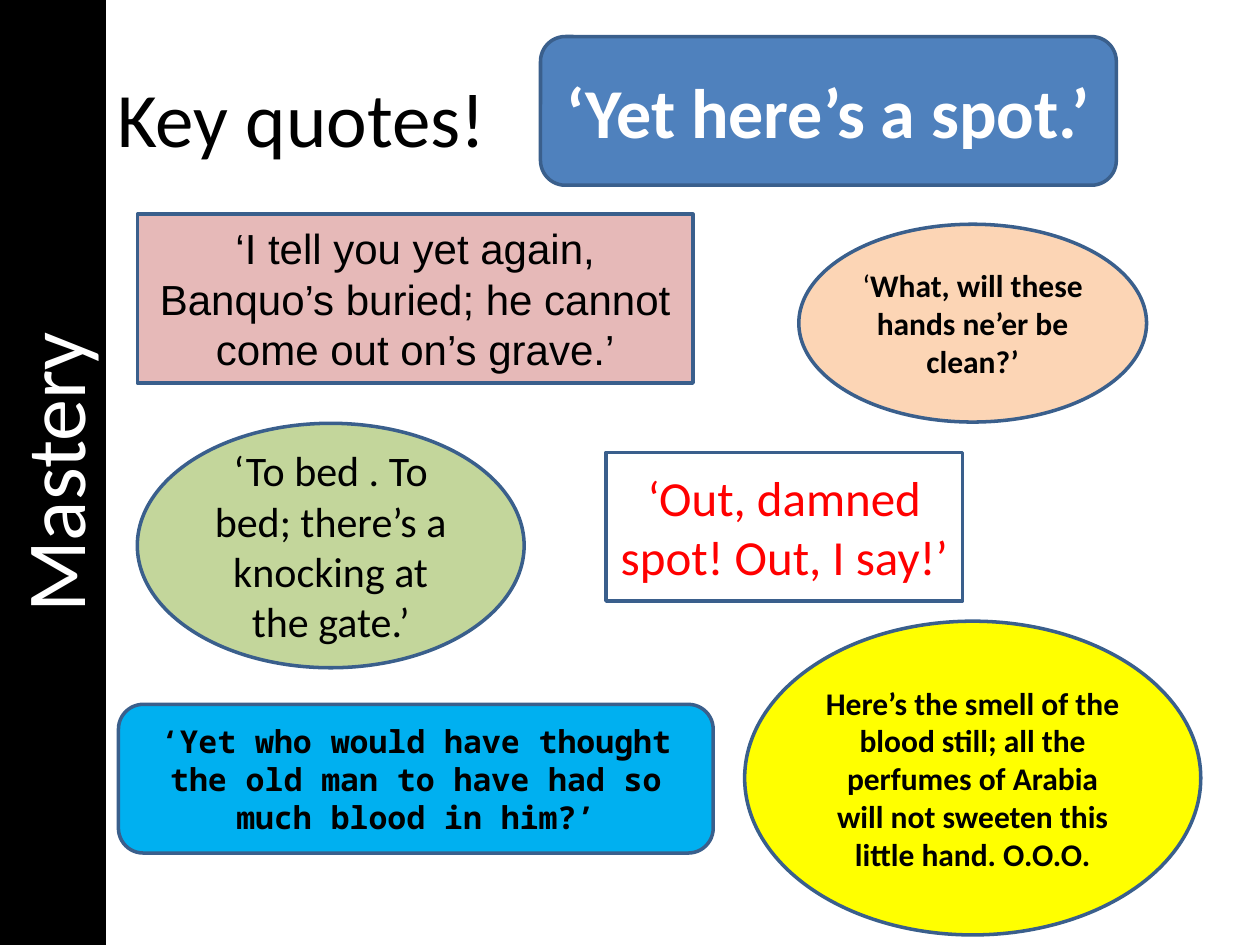
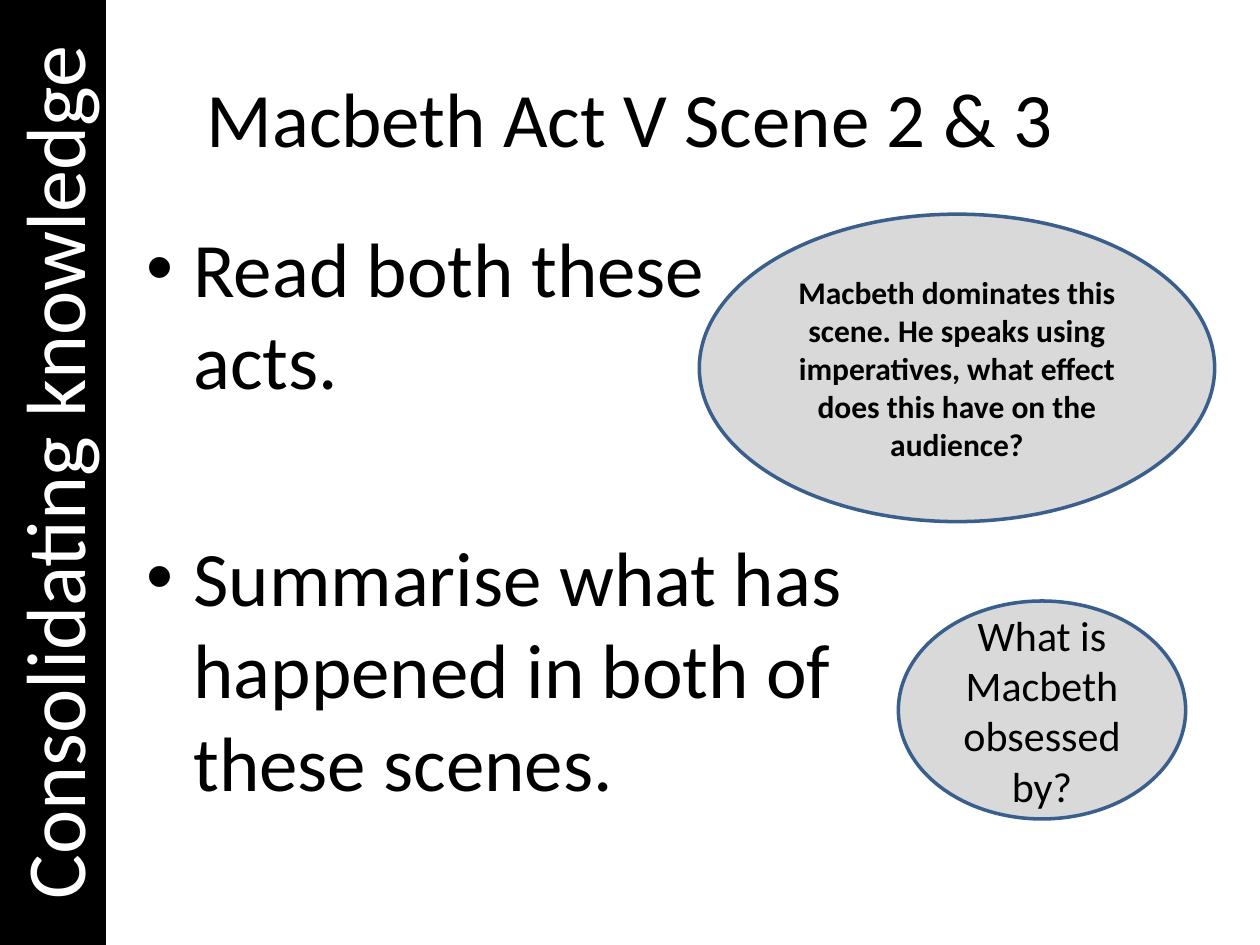
from pptx import Presentation, util as u
from pptx.dml.color import RGBColor
from pptx.enum import shapes, text

BLACK = RGBColor(0x00, 0x00, 0x00)
WHITE = RGBColor(0xFF, 0xFF, 0xFF)
RED = RGBColor(0xFF, 0x00, 0x00)
OUTLINE = RGBColor(0x3A, 0x5F, 0x8C)
BLUE = RGBColor(0x4F, 0x81, 0xBD)
SKY = RGBColor(0x00, 0xB0, 0xF0)
PEACH = RGBColor(0xFC, 0xD5, 0xB5)
YELLOW = RGBColor(0xFF, 0xFF, 0x00)
PINK = RGBColor(0xE6, 0xB9, 0xB8)
GREEN = RGBColor(0xC3, 0xD6, 0x9B)
GREY = RGBColor(0xD9, 0xD9, 0xD9)

RECT = shapes.MSO_SHAPE.RECTANGLE
ROUND = shapes.MSO_SHAPE.ROUNDED_RECTANGLE
OVAL = shapes.MSO_SHAPE.OVAL

TITLE_ONLY = 5
TITLE_AND_CONTENT = 1


class Deck:
    font = "Calibri"
    line_width = u.Pt(2)

    def __init__(self):
        self.prs = Presentation()
        self.prs.slide_width = u.Inches(10)
        self.prs.slide_height = u.Inches(7.5)
        self.s = None

    def slide(self, layout):
        self.s = self.prs.slides.add_slide(self.prs.slide_layouts[layout])

    def place(self, sp, box):
        sp.left, sp.top, sp.width, sp.height = (u.Inches(v) for v in box)

    def run(self, p, words, size, color=BLACK, bold=False, font=None):
        r = p.add_run()
        r.text = words
        r.font.size = u.Pt(size)
        r.font.name = font or self.font
        r.font.bold = bold
        r.font.color.rgb = color

    def title(self, words, width):
        sp = self.s.shapes.title
        self.place(sp, (0.5, 0.3, width, 1.25))
        tf = sp.text_frame
        tf.auto_size = text.MSO_AUTO_SIZE.NONE
        tf.vertical_anchor = text.MSO_ANCHOR.MIDDLE
        p = tf.paragraphs[0]
        p.alignment = text.PP_ALIGN.CENTER
        self.run(p, words, 44)

    def bullets(self, items, box, gap):
        sp = self.s.placeholders[1]
        self.place(sp, box)
        tf = sp.text_frame
        tf.auto_size = text.MSO_AUTO_SIZE.NONE
        for i, words in enumerate(items):
            p = tf.add_paragraph() if i else tf.paragraphs[0]
            p.space_before = u.Pt(gap if i else 0)
            self.run(p, words, 44)

    def bubble(self, kind, box, fill, runs, size, color=BLACK, bold=False,
               font=None, line=OUTLINE):
        sp = self.s.shapes.add_shape(kind, *(u.Inches(v) for v in box))
        sp.shadow.inherit = False
        sp.fill.solid()
        sp.fill.fore_color.rgb = fill
        sp.line.color.rgb = line
        sp.line.width = self.line_width
        tf = sp.text_frame
        tf.word_wrap = True
        tf.vertical_anchor = text.MSO_ANCHOR.MIDDLE
        p = tf.paragraphs[0]
        p.alignment = text.PP_ALIGN.CENTER
        if isinstance(runs, str):
            runs = [(runs, bold)]
        for words, heavy in runs:
            self.run(p, words, size, color, heavy, font)
        return sp

    def band(self, words):
        sp = self.bubble(RECT, (0, 0, 0.83, 7.5), BLACK, words, 48, WHITE,
                         line=BLACK)
        sp.element.txBody.bodyPr.set("vert", "vert270")


def key_quotes(d):
    d.slide(TITLE_ONLY)
    d.title("Key quotes!", 3.79)
    d.bubble(ROUND, (4.29, 0.29, 4.57, 1.18), BLUE,
             "‘Yet here’s a spot.’", 40, WHITE, bold=True)
    d.bubble(OVAL, (6.34, 1.78, 2.76, 1.57), PEACH,
             [("‘", False), ("What, will these hands ne’er be clean?’", True)], 18)
    d.bubble(RECT, (4.81, 3.59, 2.83, 1.18), WHITE,
             "‘Out, damned spot! Out, I say!’", 28, RED)
    d.bubble(ROUND, (0.94, 5.59, 4.72, 1.18), SKY,
             "‘Yet who would have thought the old man to have had so much "
             "blood in him?’", 18, bold=True, font="Noto Sans Mono")
    d.bubble(OVAL, (5.91, 4.93, 3.62, 2.49), YELLOW,
             "Here’s the smell of the blood still; all the perfumes of Arabia "
             "will not sweeten this little hand. O.O.O.", 18, bold=True)
    d.bubble(RECT, (1.09, 1.7, 4.41, 1.34), PINK,
             "‘I tell you yet again, Banquo’s buried; he cannot come out "
             "on’s grave.’", 24, font="Arial")
    d.bubble(OVAL, (1.09, 3.36, 3.07, 1.94), GREEN,
             "‘To bed . To bed; there’s a knocking at the gate.’", 24)
    d.band("Mastery")


def scenes(d):
    d.slide(TITLE_AND_CONTENT)
    d.title("Macbeth Act V Scene 2 & 3", 9)
    d.bullets(["Read both these acts.",
               "Summarise what has happened in both of these scenes."],
              (1.06, 1.7, 5.76, 5.25), gap=71)
    d.bubble(OVAL, (5.55, 1.7, 4.09, 2.44), GREY,
             "Macbeth dominates this scene. He speaks using imperatives, "
             "what effect does this have on the audience?", 18, bold=True)
    d.bubble(OVAL, (7.13, 4.77, 2.28, 1.73), GREY,
             "What is Macbeth obsessed by?", 24)
    d.band("Consolidating knowledge")


def main():
    d = Deck()
    key_quotes(d)
    scenes(d)
    d.prs.save("out.pptx")


if __name__ == "__main__":
    main()
